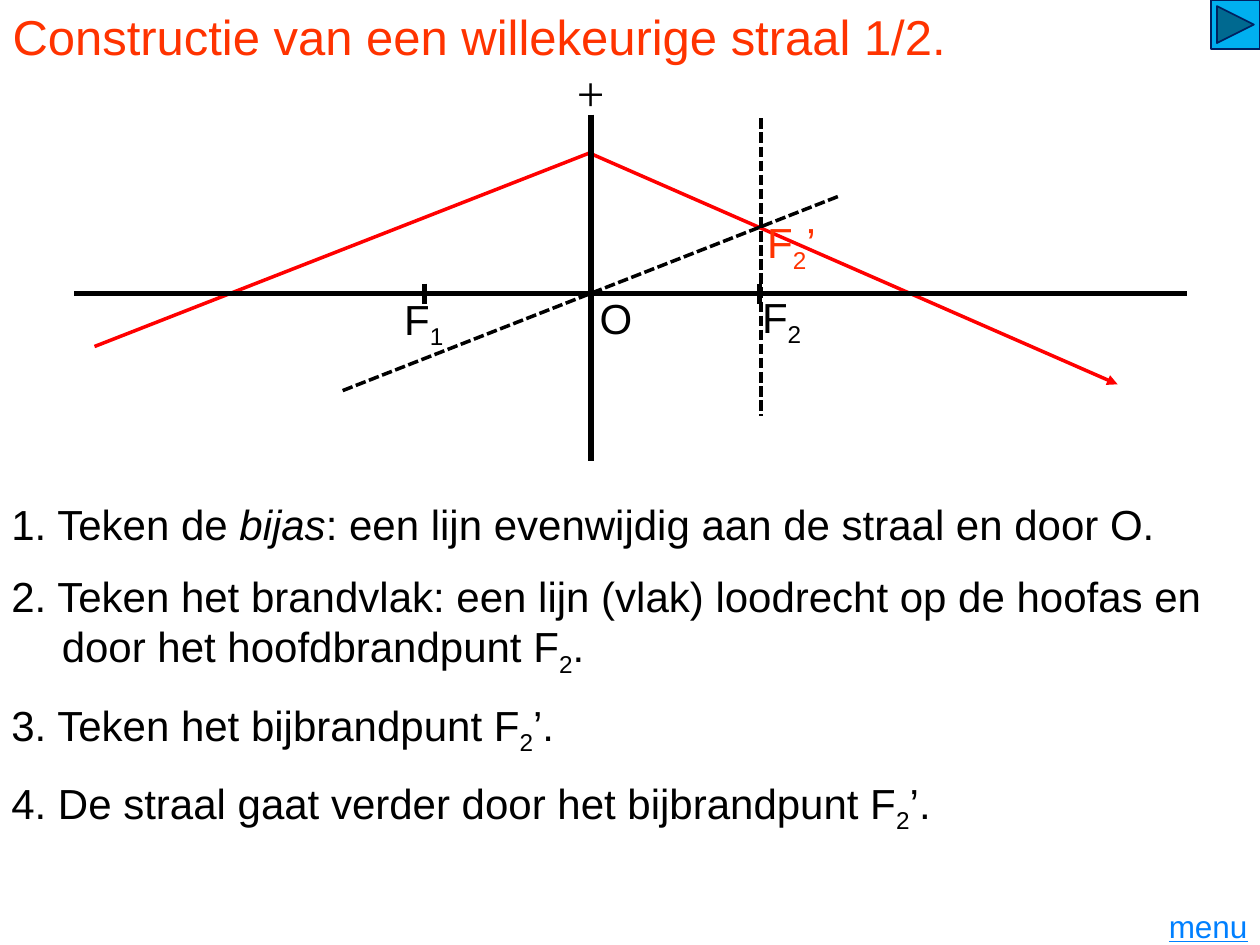
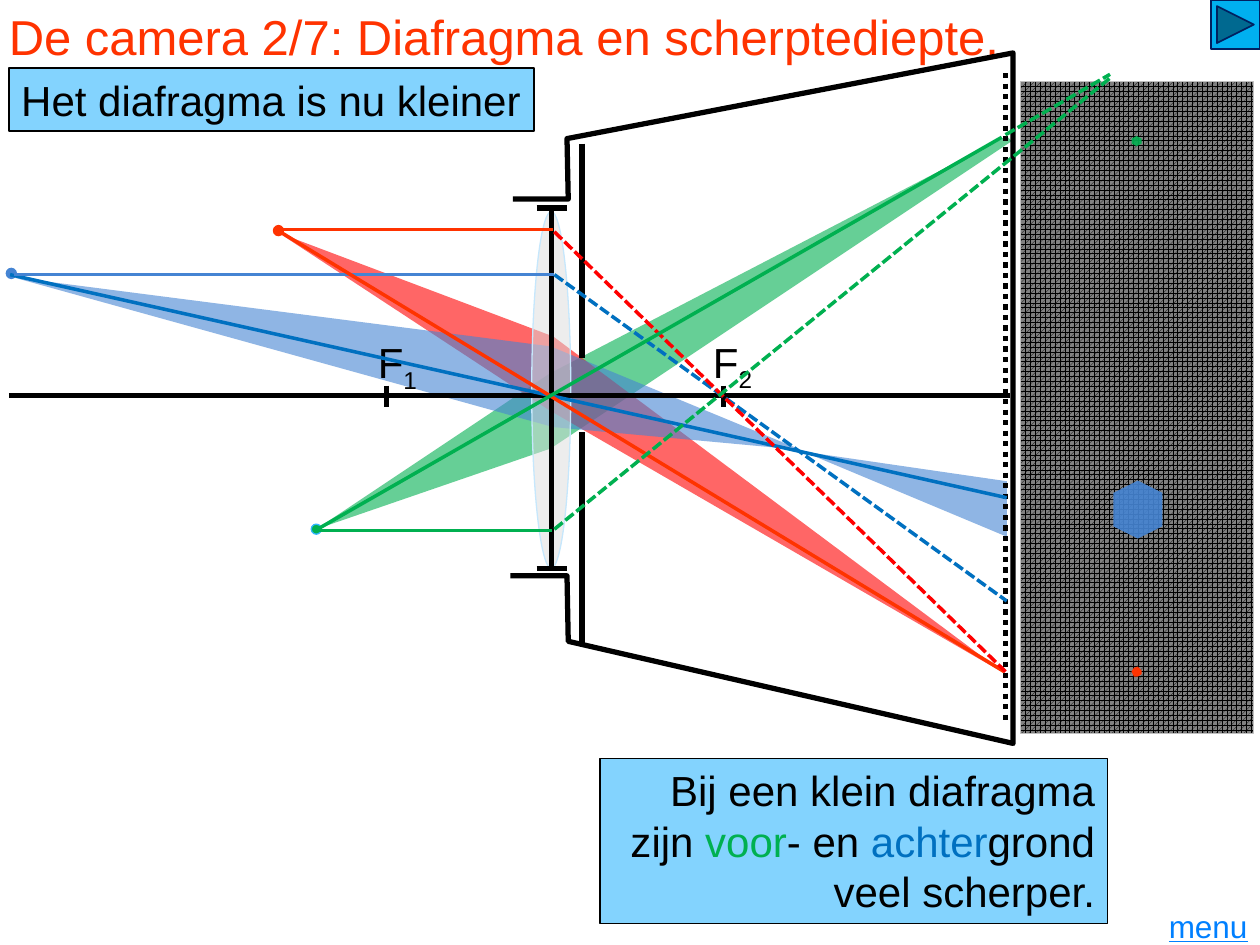
import dataclasses

import lxml.etree
import pptx
import pptx.dml.color
import pptx.enum.dml
import pptx.enum.shapes
import pptx.enum.text
import pptx.oxml.ns
import pptx.util

PX = 9144
SHAPE = pptx.enum.shapes.MSO_SHAPE
ANCHOR = pptx.enum.text.MSO_ANCHOR
ALIGN = pptx.enum.text.PP_ALIGN
DASHED = pptx.enum.dml.MSO_LINE.SQUARE_DOT
DOTTED = pptx.enum.dml.MSO_LINE.ROUND_DOT

COLORS = {
    "black": "000000",
    "title": "FF3300",
    "red": "FF0000",
    "green": "00B050",
    "blue": "0070C0",
    "soft_blue": "4584D3",
    "sky": "31B6FD",
    "button": "00B0F0",
    "navy": "002060",
    "link": "0080FF",
    "note": "83D3FE",
    "glass": "DDDDDD",
    "glass_edge": "C6E7FC",
    "grid": "808080",
    "grid_edge": "C0C0C0",
}


@dataclasses.dataclass
class Box:
    left: int
    top: int
    width: int
    height: int

    def inner(self, left, top, width, height):
        return Box(self.left + left, self.top + top, width, height)

    def point(self, x, y):
        return emu(self.left + x), emu(self.top + y)

    def frame(self):
        return [emu(side) for side in (self.left, self.top, self.width, self.height)]


def emu(length):
    return pptx.util.Emu(length * PX)


def rgb(name):
    return pptx.dml.color.RGBColor.from_string(COLORS[name])


def add_element(parent, tag, **attributes):
    return lxml.etree.SubElement(parent, pptx.oxml.ns.qn(tag), **attributes)


def sub(text):
    return text, {"baseline": -25000}


def write_text(frame, *paragraphs, size=24, font="Arial", color="black", align=ALIGN.LEFT,
               anchor=ANCHOR.TOP, underline=None, gap=0, hanging=0):
    frame.word_wrap = True
    frame.auto_size = pptx.enum.text.MSO_AUTO_SIZE.NONE
    frame.vertical_anchor = anchor
    for index, spans in enumerate(paragraphs):
        para = frame.add_paragraph() if index else frame.paragraphs[0]
        para.alignment = align
        para.space_before = pptx.util.Pt(gap if index else 0)
        if hanging:
            properties = para._p.get_or_add_pPr()
            properties.set("marL", str(emu(hanging)))
            properties.set("indent", str(-emu(hanging)))
            add_element(properties, "a:buNone")
        for item in spans:
            text, style = (item, {}) if isinstance(item, str) else item
            span = para.add_run()
            span.text = text
            span.font.size = pptx.util.Pt(size)
            span.font.name = font
            span.font.color.rgb = rgb(style.get("color", color))
            span.font.underline = underline
            span.font.italic = style.get("italic")
            if "baseline" in style:
                span._r.get_or_add_rPr().set("baseline", str(style["baseline"]))


def add_label(page, box, *spans, **style):
    label = page.shapes.add_textbox(*box.frame())
    write_text(label.text_frame, spans, **style)


def style_line(line, color, width, dash=None):
    line.color.rgb = rgb(color)
    line.width = pptx.util.Pt(width)
    if dash:
        line.dash_style = dash


def style_shape(shape, fill=None, line=None, width=0.75, alpha=None):
    shape.shadow.inherit = False
    if fill:
        shape.fill.solid()
        shape.fill.fore_color.rgb = rgb(fill)
        if alpha:
            solid = shape._element.spPr.find(pptx.oxml.ns.qn("a:solidFill"))
            add_element(solid[0], "a:alpha", val=str(alpha * 1000))
    else:
        shape.fill.background()
    if line:
        style_line(shape.line, line, width)
    else:
        shape.line.fill.background()


def add_preset(page, kind, box, rotation=0, **style):
    shape = page.shapes.add_shape(kind, *box.frame())
    shape.rotation = rotation
    style_shape(shape, **style)
    return shape


def add_outline(page, box, points, close=True, **style):
    start, *others = [box.point(*point) for point in points]
    builder = page.shapes.build_freeform(*start, scale=1.0)
    builder.add_line_segments(others, close=close)
    style_shape(builder.convert_to_shape(), **style)


def add_line(page, box, start, end, color="black", width=3, dash=None, arrow=False):
    line = page.shapes.add_connector(pptx.enum.shapes.MSO_CONNECTOR.STRAIGHT,
                                     *box.point(*start), *box.point(*end))
    style_line(line.line, color, width, dash)
    if arrow:
        add_element(line.line._get_or_add_ln(), "a:tailEnd", type="triangle")
    add_element(line._element.spPr, "a:effectLst")


def add_ticks(page, box, positions, top, bottom):
    for x in positions:
        add_line(page, box, (x, top), (x, bottom))


def place_placeholder(holder, box):
    holder.left, holder.top, holder.width, holder.height = box.frame()


def add_page(deck, layout, title, title_box):
    page = deck.slides.add_slide(deck.slide_layouts[layout])
    place_placeholder(page.shapes.title, title_box)
    write_text(page.shapes.title.text_frame, [title], size=28, color="title")
    return page


def add_navigation(page, box):
    add_preset(page, SHAPE.ACTION_BUTTON_FORWARD_OR_NEXT, box.inner(box.width - 39, 0, 39, 39),
               fill="button", line="navy", width=1)
    add_label(page, box.inner(box.width - 94, box.height - 31, 94, 31), "menu", size=18,
              color="link", underline=True, align=ALIGN.RIGHT, anchor=ANCHOR.MIDDLE)


def add_lens_diagram(page, box):
    add_line(page, box, (410, 89), (828, 272), "red", 2, arrow=True)
    add_line(page, box, (16, 242), (410, 88), "red", 2)
    add_line(page, box, (213, 277), (606, 123), width=2, dash=DASHED)
    add_line(page, box, (545, 61), (545, 297), width=2, dash=DASHED)
    add_label(page, box.inner(540, 134, 82, 50), "F", sub("2"), "’", color="title")
    add_line(page, box, (0, 200), (box.width, 200))
    add_line(page, box, (410, 58), (410, 333))
    add_ticks(page, box, (278, 544), 192, 208)
    add_label(page, box.inner(252, 188, 79, 69), "F", sub("1"), anchor=ANCHOR.MIDDLE)
    add_label(page, box.inner(536, 193, 70, 56), "F", sub("2"), anchor=ANCHOR.MIDDLE)
    add_label(page, box.inner(407, 185, 79, 69), "O", anchor=ANCHOR.MIDDLE)
    add_label(page, box.inner(389, 12, 71, 57), "+", size=28, font="Times New Roman")


def add_steps(page, box):
    body = page.placeholders[1]
    place_placeholder(body, box)
    write_text(
        body.text_frame,
        ["1. Teken de ", ("bijas", {"italic": True}),
         ": een lijn evenwijdig aan de straal en door O."],
        ["2. Teken het brandvlak: een lijn (vlak) loodrecht op de hoofas en "
         "door het hoofdbrandpunt F", sub("2"), "."],
        ["3. Teken het bijbrandpunt F", sub("2"), "’."],
        ["4. De straal gaat verder door het bijbrandpunt F", sub("2"), "’."],
        gap=12, hanging=40)


def add_beams(page, box):
    beams = {
        "green": [(251, 380), (437, 256), (799, 68), (803, 72), (437, 316)],
        "red": [(798, 495), (439, 227), (219, 144), (220, 144), (435, 285)],
        "soft_blue": [(10, 180), (439, 299), (634, 317), (799, 386), (799, 342),
                      (634, 318), (633, 316), (437, 235)],
    }
    for color, points in beams.items():
        add_outline(page, box, points, fill=color, alpha=60)
    sources = [(5, 173, "soft_blue", "soft_blue"), (217, 139, "title", "title"),
               (247, 376, "green", "sky")]
    for left, top, fill, edge in sources:
        add_preset(page, SHAPE.OVAL, box.inner(left, top, 8, 8), fill=fill, line=edge)


def add_camera(page, box):
    add_preset(page, SHAPE.OVAL, box.inner(422, 128, 31, 283), fill="glass",
               line="glass_edge", alpha=50)
    for y in (125, 411):
        add_line(page, box, (426, y), (450, y))
    add_label(page, box.inner(290, 226, 55, 48), "F", sub("1"), anchor=ANCHOR.MIDDLE)
    add_line(page, box, (438, 127), (438, 411))
    add_line(page, box, (7, 274), (802, 274))
    add_ticks(page, box, (307, 574), 266, 283)
    add_label(page, box.inner(556, 225, 78, 49), "F", sub("2"), anchor=ANCHOR.MIDDLE)
    housing = [(407, 118), (451, 118), (450, 70), (804, 2), (804, 550), (451, 469),
               (450, 417), (405, 417)]
    add_outline(page, box, housing, close=False, line="black", width=3)
    add_line(page, box, (798, 18), (798, 534), dash=DOTTED)
    for top, bottom in ((74, 244), (303, 472)):
        add_line(page, box, (462, top), (462, bottom))


def add_film(page, box):
    film = add_preset(page, SHAPE.RECTANGLE, box, line="grid_edge")
    film.fill.patterned()
    film.fill.pattern = pptx.enum.dml.MSO_PATTERN.SPHERE
    film.fill.fore_color.rgb = rgb("black")
    film.fill.back_color.rgb = rgb("grid")
    red_spot = [(90, 465), (93, 464), (96, 467), (96, 470), (93, 472), (90, 472), (88, 468)]
    add_outline(page, box, red_spot, fill="title")
    for spot, color in (((70, 320, 46, 39), "soft_blue"), ((88, 43, 8, 8), "green")):
        add_preset(page, SHAPE.HEXAGON, box.inner(*spot), rotation=90, fill=color, alpha=90)


def add_note(page, box, *spans, align=ALIGN.LEFT):
    note = add_preset(page, SHAPE.RECTANGLE, box, fill="note", line="black", width=1)
    write_text(note.text_frame, spans, align=align)


def add_rays(page, box):
    rays = [
        ((8, 178), (799, 355), "blue", None),
        ((11, 178), (440, 178), "soft_blue", None),
        ((440, 178), (799, 437), "blue", DASHED),
        ((219, 142), (797, 493), "title", None),
        ((219, 142), (439, 142), "title", None),
        ((440, 144), (798, 493), "red", DASHED),
        ((251, 381), (438, 381), "green", None),
        ((440, 380), (881, 22), "green", DASHED),
        ((252, 380), (795, 69), "green", None),
        ((798, 67), (881, 19), "green", DASHED),
    ]
    for start, end, color, dash in rays:
        add_line(page, box, start, end, color, 2, dash)


def build_construction_page(deck, box):
    page = add_page(deck, 1, "Constructie van een willekeurige straal 1/2.",
                    box.inner(0, 0, box.width, 57))
    add_lens_diagram(page, box.inner(59, 33, 883, 333))
    add_steps(page, box.inner(-1, 391, 1001, 260))
    add_navigation(page, box)


def build_camera_page(deck, box):
    page = add_page(deck, 5, "De camera 2/7: Diafragma en scherptediepte.",
                    box.inner(-3, 0, 956, 57))
    optics = box.inner(0, 40, 810, 560)
    add_beams(page, optics)
    add_camera(page, optics)
    add_navigation(page, box)
    add_note(page, box.inner(7, 54, 417, 50), "Het diafragma is nu kleiner")
    add_film(page, box.inner(810, 65, 185, 517))
    add_note(page, box.inner(476, 602, 403, 131), "Bij een klein diafragma zijn ",
             ("voor", {"color": "green"}), "- en ", ("achter", {"color": "blue"}),
             "grond veel scherper.", align=ALIGN.RIGHT)
    add_rays(page, optics)


def main():
    deck = pptx.Presentation()
    canvas = Box(0, 0, 1000, 750)
    deck.slide_width, deck.slide_height = emu(canvas.width), emu(canvas.height)
    build_construction_page(deck, canvas)
    build_camera_page(deck, canvas)
    deck.save("out.pptx")


if __name__ == "__main__":
    main()
